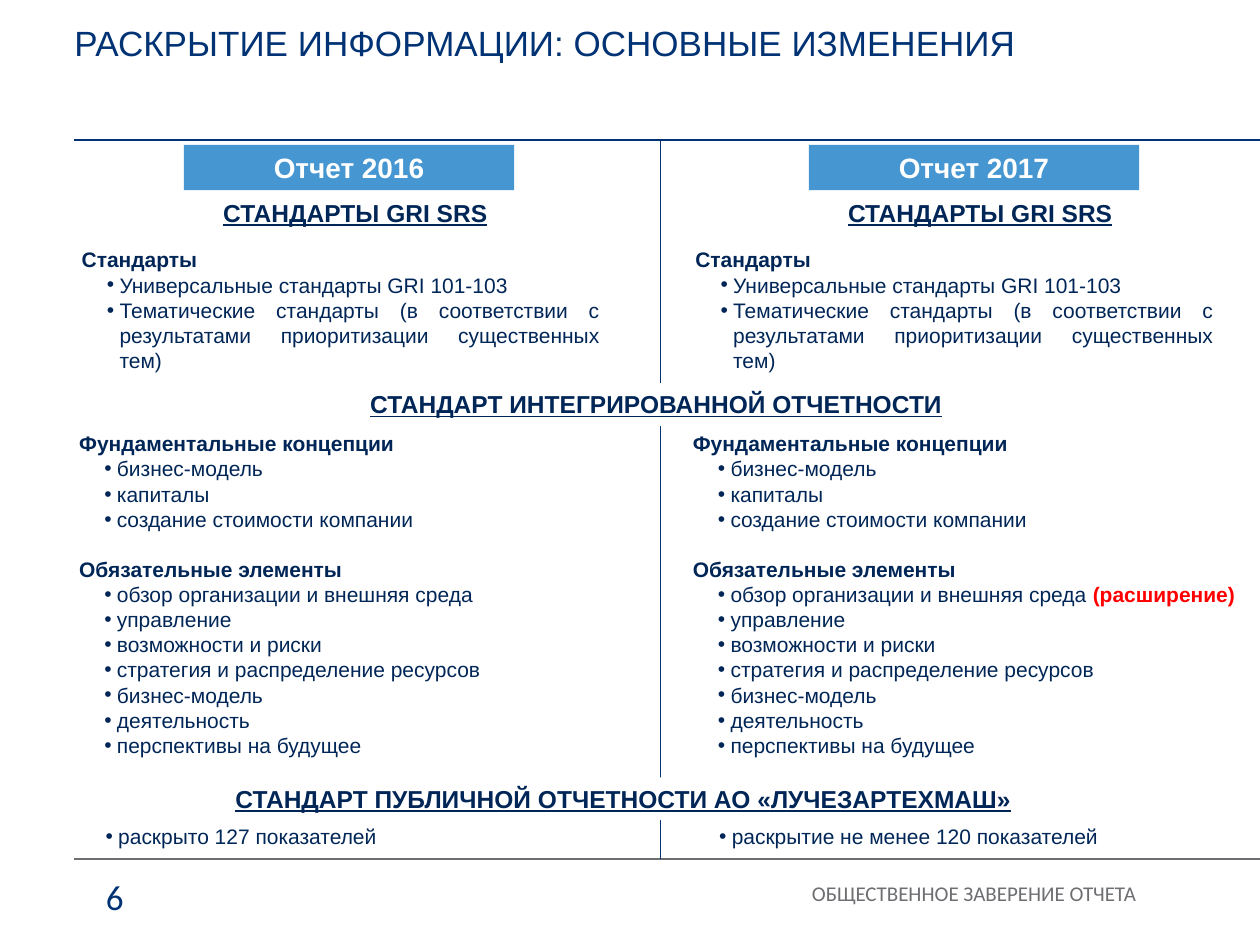
from lxml.etree import SubElement
from pptx import Presentation
from pptx.dml.color import RGBColor
from pptx.enum.shapes import MSO_CONNECTOR, MSO_SHAPE
from pptx.enum.text import MSO_ANCHOR, PP_ALIGN
from pptx.oxml.ns import qn
from pptx.util import Inches, Pt

COLUMNS, ROWS = 100, 75
NAVY, INK, GREY, BLUE, RED, WHITE = "003274", "002657", "6D6E71", "4596D1", "FF0000", "FFFFFF"
ALIGNMENTS = {"left": PP_ALIGN.LEFT, "center": PP_ALIGN.CENTER,
              "right": PP_ALIGN.RIGHT, "justify": PP_ALIGN.JUSTIFY}


def color(hex_text):
    return RGBColor.from_string(hex_text)


def write(frame, text, size=12, font="Arial", ink=INK, bold=False, underline=False,
          align="left", bullet=False, before=0, line_spacing=None, accent=None):
    """Add one paragraph; accent is an optional bold red ending."""
    first = frame.paragraphs[0]
    paragraph = frame.add_paragraph() if first.runs else first
    if bullet:
        properties = paragraph._p.get_or_add_pPr()
        properties.set("marL", str(Inches(0.3)))
        properties.set("indent", str(Inches(-0.1)))
        SubElement(properties, qn("a:buFont")).set("typeface", "Arial")
        SubElement(properties, qn("a:buChar")).set("char", "•")
    paragraph.alignment = ALIGNMENTS[align]
    if before:
        paragraph.space_before = Pt(before)
    if line_spacing:
        paragraph.line_spacing = Pt(line_spacing)
    pieces = [(text, ink, bold)] + ([(accent, RED, True)] if accent else [])
    for piece, piece_ink, piece_bold in pieces:
        run = paragraph.add_run()
        run.text = piece
        run.font.size, run.font.name = Pt(size), font
        run.font.bold, run.font.underline = piece_bold, underline
        run.font.color.rgb = color(piece_ink)


class SlideBuilder:
    def __init__(self, presentation):
        self.slide = presentation.slides.add_slide(presentation.slide_layouts[5])
        self.column = presentation.slide_width / COLUMNS
        self.row = presentation.slide_height / ROWS

    def place(self, left, top, width, height):
        return (round(left * self.column), round(top * self.row),
                round(width * self.column), round(height * self.row))

    def prepare(self, frame, insets=None, anchor=MSO_ANCHOR.TOP):
        frame.word_wrap = True
        frame.vertical_anchor = anchor
        if insets is not None:
            frame.margin_left = frame.margin_right = 0
            frame.margin_top = frame.margin_bottom = Inches(insets)
        return frame

    def title(self, text, *box):
        shape = self.slide.shapes.title
        shape.left, shape.top, shape.width, shape.height = self.place(*box)
        write(self.prepare(shape.text_frame, 0.04), text, size=20, ink=NAVY)

    def text_box(self, *box, insets=None):
        shape = self.slide.shapes.add_textbox(*self.place(*box))
        return self.prepare(shape.text_frame, insets)

    def panel(self, *box, fill=WHITE, insets=None, anchor=MSO_ANCHOR.TOP):
        shape = self.slide.shapes.add_shape(MSO_SHAPE.RECTANGLE, *self.place(*box))
        shape.shadow.inherit = False
        shape.fill.solid()
        shape.fill.fore_color.rgb = color(fill)
        shape.line.fill.background()
        return self.prepare(shape.text_frame, insets, anchor)

    def line(self, left, top, right, bottom, ink, width):
        start, end = self.place(left, top, right, bottom)[:2], self.place(left, top, right, bottom)[2:]
        connector = self.slide.shapes.add_connector(MSO_CONNECTOR.STRAIGHT, *start, *end)
        connector.line.color.rgb = color(ink)
        connector.line.width = Pt(width)
        SubElement(connector._element.spPr, qn("a:effectLst"))

    def section(self, text, *box):
        write(self.panel(*box), text, size=14, bold=True, underline=True)

    def groups(self, frame, groups, accents=None):
        """Bold headings, each followed by its bulleted items."""
        for number, (heading, items) in enumerate(groups):
            write(frame, heading, bold=True, align="justify", before=14 if number else 0)
            for item in items:
                accent = (accents or {}).get(item)
                write(frame, item + (" " if accent else ""), align="justify",
                      bullet=True, accent=accent)


STANDARDS = [("Стандарты", [
    "Универсальные стандарты GRI 101-103",
    "Тематические стандарты (в соответствии с результатами приоритизации существенных тем)"])]
OVERVIEW = "обзор организации и внешняя среда"
INTEGRATED = [
    ("Фундаментальные концепции",
     ["бизнес-модель", "капиталы", "cоздание стоимости компании"]),
    ("Обязательные элементы",
     [OVERVIEW, "управление", "возможности и риски", "стратегия и распределение ресурсов",
      "бизнес-модель", "деятельность", "перспективы на будущее"])]
# Report heading, column offset, heading offset, disclosure, additions
REPORTS = [
    ("Отчет 2016", 0, 0, "раскрыто 127 показателей", {}),
    ("Отчет 2017", 48.7, 49.6, "раскрытие не менее 120 показателей",
     {OVERVIEW: "(расширение)"})]


def main():
    presentation = Presentation()
    presentation.slide_width, presentation.slide_height = Inches(10), Inches(7.5)
    builder = SlideBuilder(presentation)

    # Title, rules and the divider between the reports
    builder.title("РАСКРЫТИЕ ИНФОРМАЦИИ: ОСНОВНЫЕ ИЗМЕНЕНИЯ", 5.9, 1.3, 90, 9.4)
    builder.line(5.9, 11.1, COLUMNS, 11.1, NAVY, 1)
    builder.line(5.9, 68.2, COLUMNS, 68.2, GREY, 1)
    builder.line(52.4, 11.2, 52.4, 68.2, NAVY, 0.75)

    # Section headings that interrupt the divider
    builder.section("СТАНДАРТ ИНТЕГРИРОВАННОЙ ОТЧЕТНОСТИ", 28.4, 30.4, 47.6, 3.4)
    builder.section("СТАНДАРТ ПУБЛИЧНОЙ ОТЧЕТНОСТИ АО «ЛУЧЕЗАРТЕХМАШ»", 17.7, 61.7, 74.8, 3.4)

    # One column for each report
    for name, offset, heading_offset, disclosure, accents in REPORTS:
        builder.groups(builder.panel(5.5 + offset, 19.1, 43.1, 11.1), STANDARDS)
        write(builder.panel(6.5 + heading_offset, 15.2, 43.4, 3.4), "СТАНДАРТЫ GRI SRS",
              size=14, bold=True, underline=True, align="center")
        builder.groups(builder.text_box(5.3 + offset, 33.7, 46.4, 27.3), INTEGRATED, accents)
        write(builder.text_box(5.4 + offset, 64.9, 46, 3), disclosure, bullet=True)
        bar = builder.panel(14.6 + heading_offset, 11.5, 26.2, 3.6, fill=BLUE,
                            insets=0, anchor=MSO_ANCHOR.MIDDLE)
        write(bar, name, size=16, ink=WHITE, bold=True, align="center")

    # Page number and footer
    write(builder.text_box(3.7, 69, 7.1, 3.9), "6", size=20, font="Calibri",
          ink=NAVY, align="right")
    write(builder.text_box(33.5, 70.1, 56.7, 4.6, insets=0), "ОБЩЕСТВЕННОЕ ЗАВЕРЕНИЕ ОТЧЕТА",
          font="Calibri", ink=GREY, align="right", line_spacing=13)

    presentation.save("out.pptx")


if __name__ == "__main__":
    main()
